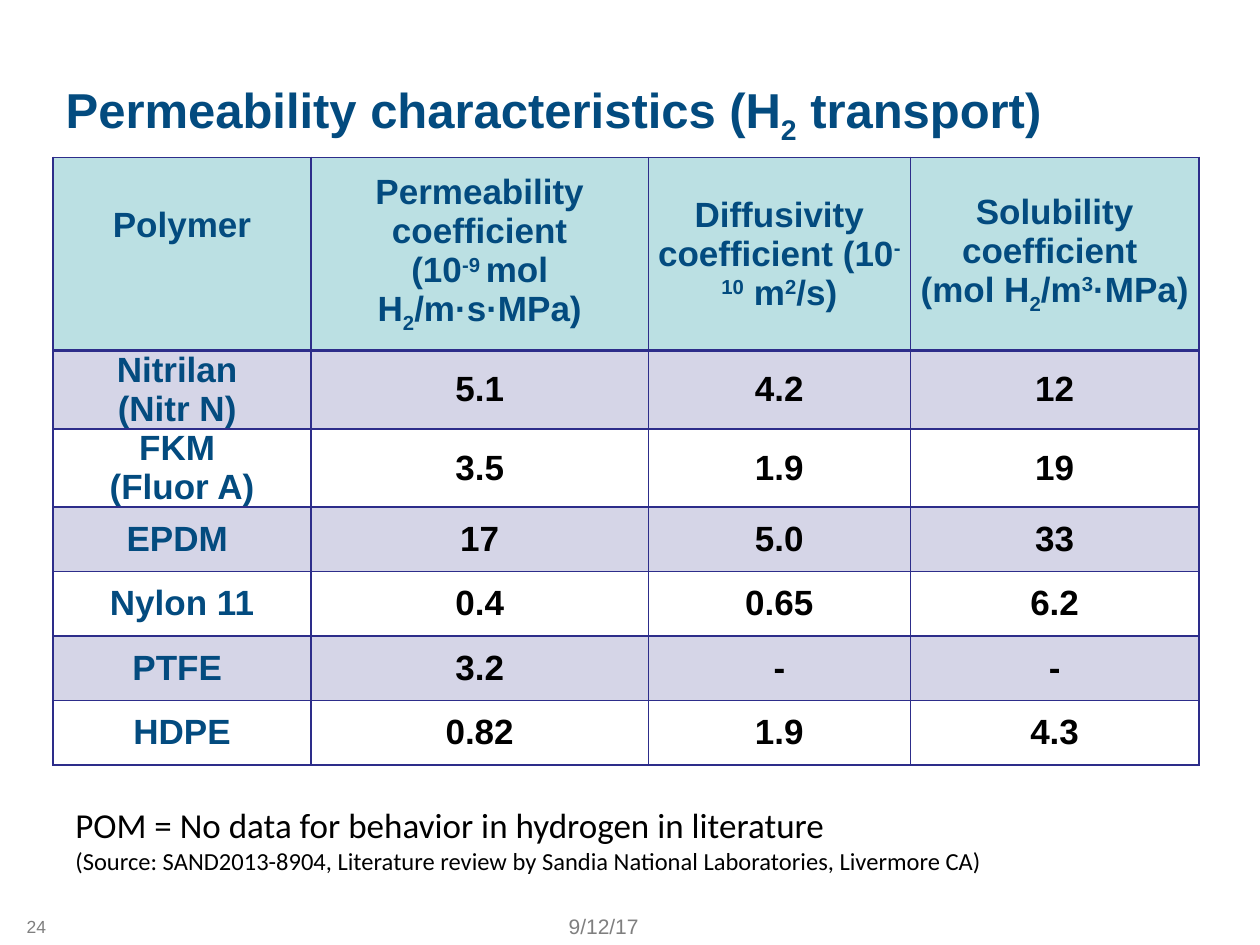
import pptx
import pptx.dml.color
import pptx.enum.text
import pptx.oxml
import pptx.oxml.ns
import pptx.util
import lxml.etree

Cm = pptx.util.Cm
Pt = pptx.util.Pt
RGB = pptx.dml.color.RGBColor
ALIGN = pptx.enum.text.PP_ALIGN
ANCHOR = pptx.enum.text.MSO_ANCHOR
qn = pptx.oxml.ns.qn

BLUE = RGB(0x03, 0x4B, 0x7F)
BLACK = RGB(0, 0, 0)
GREY = RGB(0x7F, 0x7F, 0x7F)
INDIGO = RGB(0x2D, 0x2D, 0x8A)
AQUA = RGB(0xBB, 0xE0, 0xE3)

TITLE = {"name": "Arial", "size": Pt(28), "bold": True}
CELL = {"name": "Arial", "size": Pt(20), "bold": True}
NOTE = {"name": "Calibri", "size": Pt(20)}
SOURCE = {"name": "Calibri", "size": Pt(14)}
DATE = {"name": "Arial", "size": Pt(12)}
NUMBER = {"name": "Arial", "size": Pt(10)}

SUB, SUP = -25000, 30000
COL_WIDTHS = [5.2, 6.8, 5.28, 5.82]
ROW_HEIGHTS = [3.9, 1.57, 1.57, 1.3, 1.3, 1.3, 1.3]
HEADERS = [
    ["Polymer"],
    ["Permeability coefficient\n(10", ("-9 ", SUP), "mol H", ("2", SUB), "/m·s·MPa)"],
    ["Diffusivity coefficient (10", ("-10", SUP), " m", ("2", SUP), "/s)"],
    ["Solubility coefficient \n(mol H", ("2", SUB), "/m", ("3", SUP), "·MPa)"],
]
POLYMERS = [
    (["Nitrilan ", "(Nitr N) "], "5.1", "4.2", "12"),
    (["FKM ", "(Fluor A)"], "3.5", "1.9", "19"),
    (["EPDM "], "17", "5.0", "33"),
    (["Nylon 11"], "0.4", "0.65", "6.2"),
    (["PTFE "], "3.2", "-", "-"),
    (["HDPE"], "0.82", "1.9", "4.3"),
]


def set_attrs(obj, values):
    for name, value in values.items():
        setattr(obj, name, value)


def add_runs(p, parts, fmt, color):
    for part in parts:
        text, base = (part, 0) if isinstance(part, str) else part
        for i, line in enumerate(text.split("\n")):
            if i:
                p.add_line_break()
            r = p.add_run()
            r.text = line
            set_attrs(r.font, fmt)
            r.font.color.rgb = color
            if base:
                r.font._element.set("baseline", str(base))


def fill_text(tf, paragraphs, color, align):
    for i, (parts, fmt) in enumerate(paragraphs):
        p = tf.add_paragraph() if i else tf.paragraphs[0]
        p.alignment = align
        add_runs(p, parts, fmt, color)


def add_title(s, left, top, width, height):
    sp = s.shapes.title
    set_attrs(sp, {"left": left, "top": top, "width": width, "height": height})
    tf = sp.text_frame
    set_attrs(tf, {"word_wrap": True, "vertical_anchor": ANCHOR.TOP,
                   "auto_size": pptx.enum.text.MSO_AUTO_SIZE.NONE})
    parts = ["Permeability characteristics (H", ("2", SUB), " transport)"]
    fill_text(tf, [(parts, TITLE)], BLUE, ALIGN.LEFT)


def add_text(s, box, paragraphs, color, align=ALIGN.LEFT, anchor=ANCHOR.TOP):
    tf = s.shapes.add_textbox(*box).text_frame
    set_attrs(tf, {"word_wrap": True, "vertical_anchor": anchor})
    fill_text(tf, paragraphs, color, align)


def set_borders(cell, bottom):
    tcPr = cell._tc.get_or_add_tcPr()
    for tag, width in (("a:lnL", 1), ("a:lnR", 1), ("a:lnT", 1), ("a:lnB", bottom)):
        ln = lxml.etree.SubElement(tcPr, qn(tag), w=str(Pt(width)))
        fill = lxml.etree.SubElement(ln, qn("a:solidFill"))
        lxml.etree.SubElement(fill, qn("a:srgbClr"), val=str(INDIGO))


def set_fill(cell, color, opacity=None):
    if color is None:
        cell.fill.background()
        return
    cell.fill.solid()
    cell.fill.fore_color.rgb = color
    if opacity:
        clr = next(cell._tc.tcPr.find(qn("a:solidFill")).iter(qn("a:srgbClr")))
        lxml.etree.SubElement(clr, qn("a:alpha"), val=str(opacity * 1000))


def format_cell(cell, paragraphs, color, bottom=1):
    set_attrs(cell, {"margin_left": Cm(0.18), "margin_right": Cm(0.18),
                     "margin_top": 0, "margin_bottom": 0,
                     "vertical_anchor": ANCHOR.MIDDLE})
    fill_text(cell.text_frame, [(parts, CELL) for parts in paragraphs], color, ALIGN.CENTER)
    set_borders(cell, bottom)


def add_polymer_table(s, left, top):
    frame = s.shapes.add_table(len(ROW_HEIGHTS), len(COL_WIDTHS), left, top,
                               Cm(sum(COL_WIDTHS)), Cm(sum(ROW_HEIGHTS)))
    table = frame.table
    set_attrs(table, {"first_row": False, "horz_banding": False})
    for col, width in zip(table.columns, COL_WIDTHS):
        col.width = Cm(width)
    for row, height in zip(table.rows, ROW_HEIGHTS):
        row.height = Cm(height)
    for c, parts in enumerate(HEADERS):
        cell = table.cell(0, c)
        format_cell(cell, [parts], BLUE, bottom=2)
        set_fill(cell, AQUA)
    set_attrs(table.cell(0, 0), {"vertical_anchor": ANCHOR.TOP, "margin_top": Cm(0.97)})
    for r, (name, *values) in enumerate(POLYMERS, 1):
        for c, lines in enumerate([name] + [[value] for value in values]):
            cell = table.cell(r, c)
            format_cell(cell, [[line] for line in lines], BLACK if c else BLUE)
            set_fill(cell, INDIGO if r % 2 else None, 20)


def add_footer(s, left, top, height):
    for x, width, text, fmt in ((9.53, 5.28, "9/12/17", DATE), (0, 1.47, "24", NUMBER)):
        box = (left + Cm(x), top, Cm(width), height)
        add_text(s, box, [([text], fmt)], GREY, ALIGN.CENTER, ANCHOR.MIDDLE)


def main():
    prs = pptx.Presentation()
    set_attrs(prs, {"slide_width": Cm(25.4), "slide_height": Cm(19.05)})
    s = prs.slides.add_slide(prs.slide_layouts[5])
    add_title(s, Cm(1.07), Cm(1.47), Cm(23.7), Cm(2.18))
    add_polymer_table(s, Cm(1.07), Cm(3.17))
    notes = [
        (["POM = No data for behavior in hydrogen in literature"], NOTE),
        (["(Source: SAND2013-8904, Literature review by Sandia National Laboratories, "
          "Livermore CA)"], SOURCE),
    ]
    add_text(s, (Cm(1.27), Cm(16.08), Cm(19.89), Cm(1.7)), notes, BLACK)
    add_footer(s, Cm(0), Cm(18.36), Cm(0.64))
    prs.save("out.pptx")


if __name__ == "__main__":
    main()
